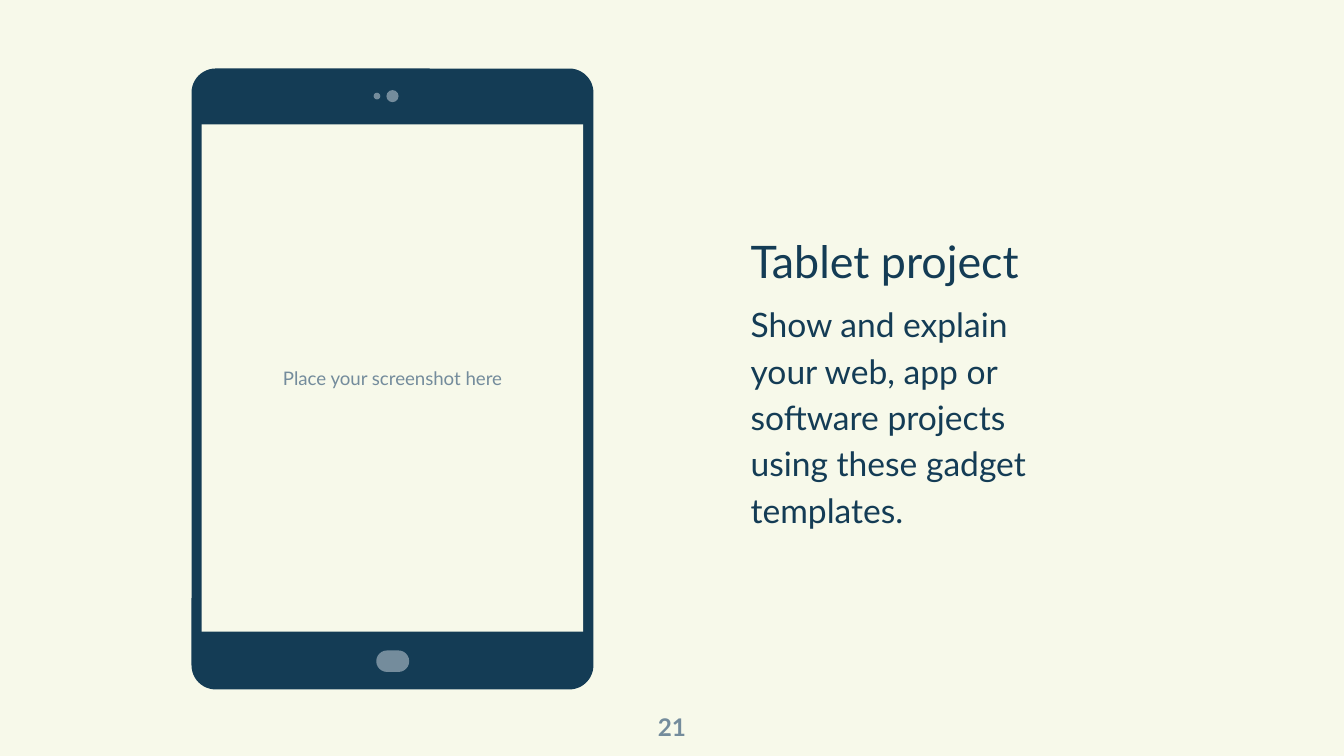
"""Build a slide that shows a tablet mockup beside a short project text."""
from typing import NamedTuple

from pptx import Presentation
from pptx.dml.color import RGBColor
from pptx.enum.shapes import MSO_SHAPE
from pptx.enum.text import MSO_ANCHOR, MSO_AUTO_SIZE, PP_ALIGN
from pptx.util import Inches, Pt

ROUND, RECT, OVAL = MSO_SHAPE.ROUNDED_RECTANGLE, MSO_SHAPE.RECTANGLE, MSO_SHAPE.OVAL
LEFT, CENTER = PP_ALIGN.LEFT, PP_ALIGN.CENTER
MIDDLE, FIXED = MSO_ANCHOR.MIDDLE, MSO_AUTO_SIZE.NONE
CELL = Inches(0.1)
COLS, ROWS = 100, 56.25
FONT = "Lato"
HEX = {"paper": "F7F9EA", "navy": "143C55", "slate": "748C9C"}


class Box(NamedTuple):
    """Place and size in grid columns and rows."""
    col: float
    row: float
    wide: float
    high: float

    def emu(self) -> list[int]:
        """Turn the grid lengths into slide units."""
        return [round(n * CELL) for n in self]


class Part(NamedTuple):
    """One filled piece of the tablet."""
    kind: MSO_SHAPE
    box: Box
    color: str
    curve: float = 0


PARTS = {
    "body": Part(ROUND, Box(14.25, 5.1, 29.9, 46.2), "navy", 0.06),
    "button": Part(ROUND, Box(28, 48.4, 2.45, 1.6), "slate", 0.5),
    "sensor": Part(OVAL, Box(27.8, 6.9, 0.5, 0.5), "slate"),
    "camera": Part(OVAL, Box(28.75, 6.7, 0.9, 0.9), "slate"),
    "screen": Part(RECT, Box(15, 9.25, 28.4, 37.75), "paper"),
}
NUMBER = Box(47, 51.95, 6, 4.3)
STORY = Box(55.85, 9.6, 23.7, 37)


def rgb(name: str) -> RGBColor:
    """Look up a colour by name."""
    return RGBColor.from_string(HEX[name])


def draw(slide, part: Part):
    """Add one flat piece of the tablet."""
    shape = slide.shapes.add_shape(part.kind, *part.box.emu())
    shape.shadow.inherit = False
    shape.fill.solid()
    shape.fill.fore_color.rgb = rgb(part.color)
    shape.line.fill.background()
    if part.curve:
        shape.adjustments[0] = part.curve
    return shape


def write(shape, *lines: str, sizes: tuple, color: str, align=LEFT,
          bold: bool = False, inset: float = 0, lead: float = 1, gap: float = 0) -> None:
    """Fill a shape with one paragraph per line."""
    frame = shape.text_frame
    frame.auto_size = FIXED
    frame.word_wrap = True
    frame.vertical_anchor = MIDDLE
    frame.margin_left = frame.margin_right = round(inset * CELL)
    frame.margin_top = frame.margin_bottom = round(inset * CELL)
    frame.text = "\n".join(lines)
    for i, (para, size) in enumerate(zip(frame.paragraphs, sizes)):
        para.alignment = align
        para.line_spacing = lead
        para.space_before = Pt(gap if i else 0)
        para.space_after = Pt(0)
        font = para.runs[0].font
        font.name, font.size, font.bold = FONT, Pt(size), bold
        font.color.rgb = rgb(color)


def main() -> None:
    """Build and save the slide."""
    deck = Presentation()
    deck.slide_width, deck.slide_height = round(COLS * CELL), round(ROWS * CELL)
    slide = deck.slides.add_slide(deck.slide_layouts.get_by_name("Section Header"))
    slide.background.fill.solid()
    slide.background.fill.fore_color.rgb = rgb("paper")
    title = slide.shapes.title.element
    title.getparent().remove(title)

    tablet = {name: draw(slide, part) for name, part in PARTS.items()}
    write(tablet["screen"], "Place your screenshot here", sizes=(10,),
          color="slate", align=CENTER, inset=1)
    write(slide.shapes.add_textbox(*NUMBER.emu()), "21", sizes=(13,),
          color="slate", align=CENTER, bold=True)

    story = slide.placeholders[1]
    story.left, story.top, story.width, story.height = STORY.emu()
    write(story, "Tablet project",
          "Show and explain your web, app or software projects "
          "using these gadget templates.",
          sizes=(24, 18), color="navy", lead=1.15, gap=6)
    deck.save("out.pptx")


if __name__ == "__main__":
    main()
